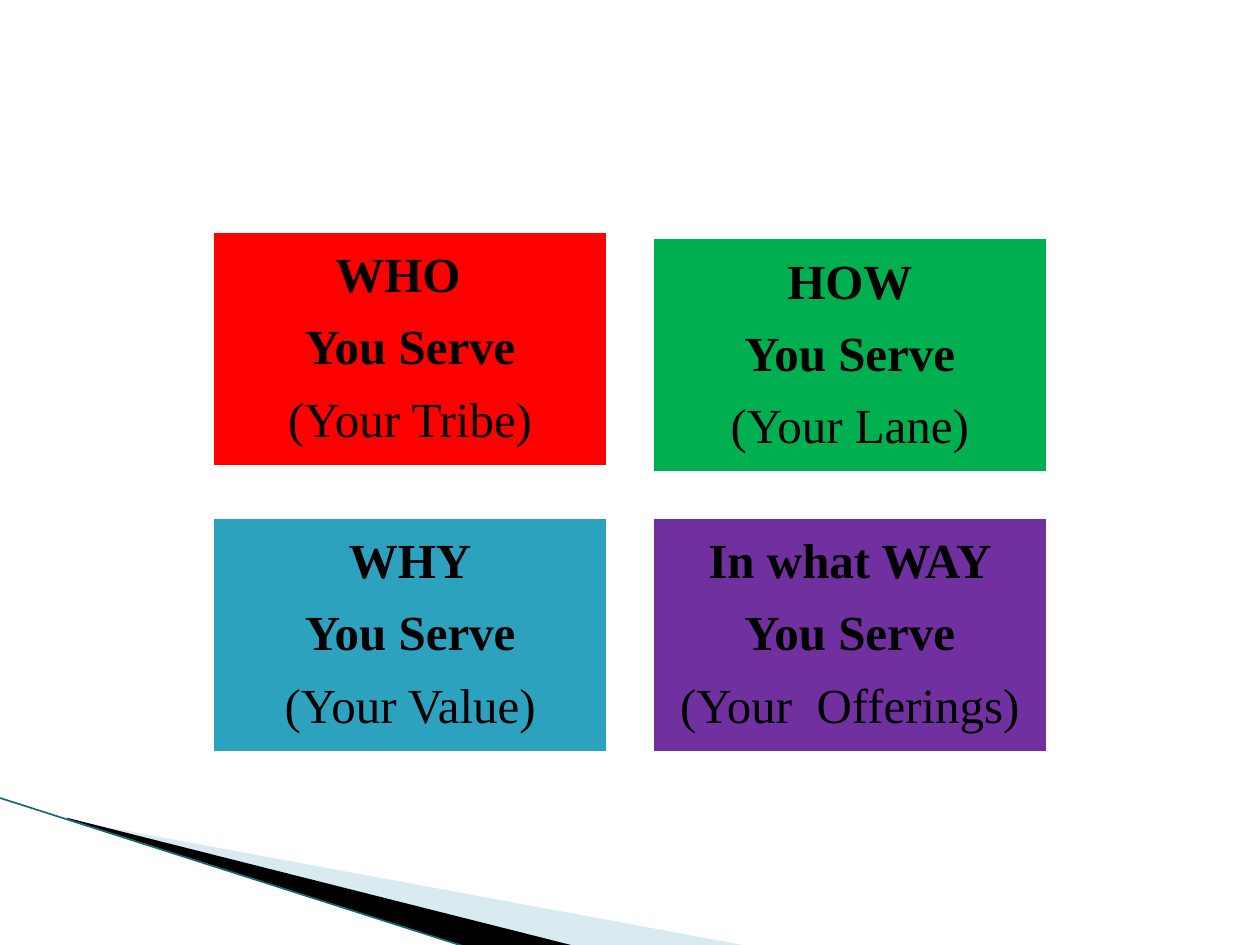
import dataclasses

import pptx
import pptx.dml.color
import pptx.enum.shapes
import pptx.enum.text
import pptx.oxml
import pptx.oxml.ns
import pptx.util

Inches = pptx.util.Inches
Pt = pptx.util.Pt


def rgb(code):
    return pptx.dml.color.RGBColor.from_string(code)


@dataclasses.dataclass(frozen=True)
class Theme:
    font: str = "Times New Roman"
    text_size: float = 28
    text: str = "000000"
    border: str = "FFFFFF"
    border_width: float = 4.33
    pale_wedge: str = "A0CBDC"
    pale_opacity: int = 40
    dark_wedge: str = "000000"
    edge: str = "16697A"
    edge_width: float = 0.95
    who: str = "FF0000"
    how: str = "00B050"
    why: str = "2DA2BF"
    way: str = "7030A0"


THEME = Theme()

CARD_WIDTH, CARD_HEIGHT = 3.17, 1.9
COLUMNS = (1.67, 5.16)
CARDS = [
    (COLUMNS[0], 1.82, THEME.who, ("WHO  ", "You Serve", "(Your Tribe)")),
    (COLUMNS[1], 1.87, THEME.how, ("HOW", "You Serve", "(Your Lane)")),
    (COLUMNS[0], 4.09, THEME.why, ("WHY", "You Serve", "(Your Value)")),
    (COLUMNS[1], 4.09, THEME.way, ("In what WAY", "You Serve", "(Your  Offerings)")),
]


def add_wedge(slide, left, top, offsets, color, opacity=100):
    """Draw a filled outline whose points are offsets from left, top."""
    points = [(Inches(left + x), Inches(top + y)) for x, y in offsets]
    builder = slide.shapes.build_freeform(*points[0])
    builder.add_line_segments(points[1:], close=True)
    wedge = builder.convert_to_shape()
    wedge.shadow.inherit = False
    wedge.fill.solid()
    wedge.fill.fore_color.rgb = rgb(color)
    wedge.line.fill.background()
    if opacity < 100:
        fill_color = wedge.fill._xPr.find(".//" + pptx.oxml.ns.qn("a:srgbClr"))
        alpha = pptx.oxml.parse_xml(
            f'<a:alpha {pptx.oxml.ns.nsdecls("a")} val="{opacity * 1000}"/>')
        fill_color.append(alpha)


def add_corner_sweep(slide, left, top):
    """Draw the wedges and the edge line that cross the lower left corner."""
    add_wedge(slide, left + 0.56, top + 0.17,
              [(0, 0.01), (5.4, 1.01), (4.01, 1.01), (0, 0)],
              THEME.pale_wedge, THEME.pale_opacity)
    add_wedge(slide, left + 0.54, top + 0.16,
              [(0, 0), (4.04, 1.02), (3.19, 1.03), (0.01, 0.01)],
              THEME.dark_wedge)
    edge = slide.shapes.add_connector(
        pptx.enum.shapes.MSO_CONNECTOR.STRAIGHT,
        Inches(left), Inches(top), Inches(left + 3.72), Inches(top + 1.19))
    edge.line.color.rgb = rgb(THEME.edge)
    edge.line.width = Pt(THEME.edge_width)
    edge._element.spPr.append(
        pptx.oxml.parse_xml(f'<a:effectLst {pptx.oxml.ns.nsdecls("a")}/>'))


def add_card(slide, left, top, width, height, color, lines):
    card = slide.shapes.add_shape(
        pptx.enum.shapes.MSO_SHAPE.RECTANGLE,
        Inches(left), Inches(top), Inches(width), Inches(height))
    card.shadow.inherit = False
    card.fill.solid()
    card.fill.fore_color.rgb = rgb(color)
    card.line.color.rgb = rgb(THEME.border)
    card.line.width = Pt(THEME.border_width)

    frame = card.text_frame
    frame.word_wrap = True
    frame.vertical_anchor = pptx.enum.text.MSO_ANCHOR.MIDDLE
    frame.margin_left = frame.margin_right = Inches(0.12)
    frame.margin_top = frame.margin_bottom = Inches(0.12)
    frame.text = "\n".join(lines)
    for paragraph in frame.paragraphs:
        paragraph.alignment = pptx.enum.text.PP_ALIGN.CENTER
        paragraph.line_spacing = 0.9
        paragraph.space_after = Pt(11)
        for run in paragraph.runs:
            run.font.name = THEME.font
            run.font.size = Pt(THEME.text_size)
            run.font.color.rgb = rgb(THEME.text)
            run.font.bold = not run.text.startswith("(")


def main():
    deck = pptx.Presentation()
    deck.slide_width, deck.slide_height = Inches(10), Inches(7.5)
    slide = deck.slides.add_slide(deck.slide_layouts[6])
    add_corner_sweep(slide, -0.01, 6.33)
    for left, top, color, lines in CARDS:
        add_card(slide, left, top, CARD_WIDTH, CARD_HEIGHT, color, lines)
    deck.save("out.pptx")


if __name__ == "__main__":
    main()
